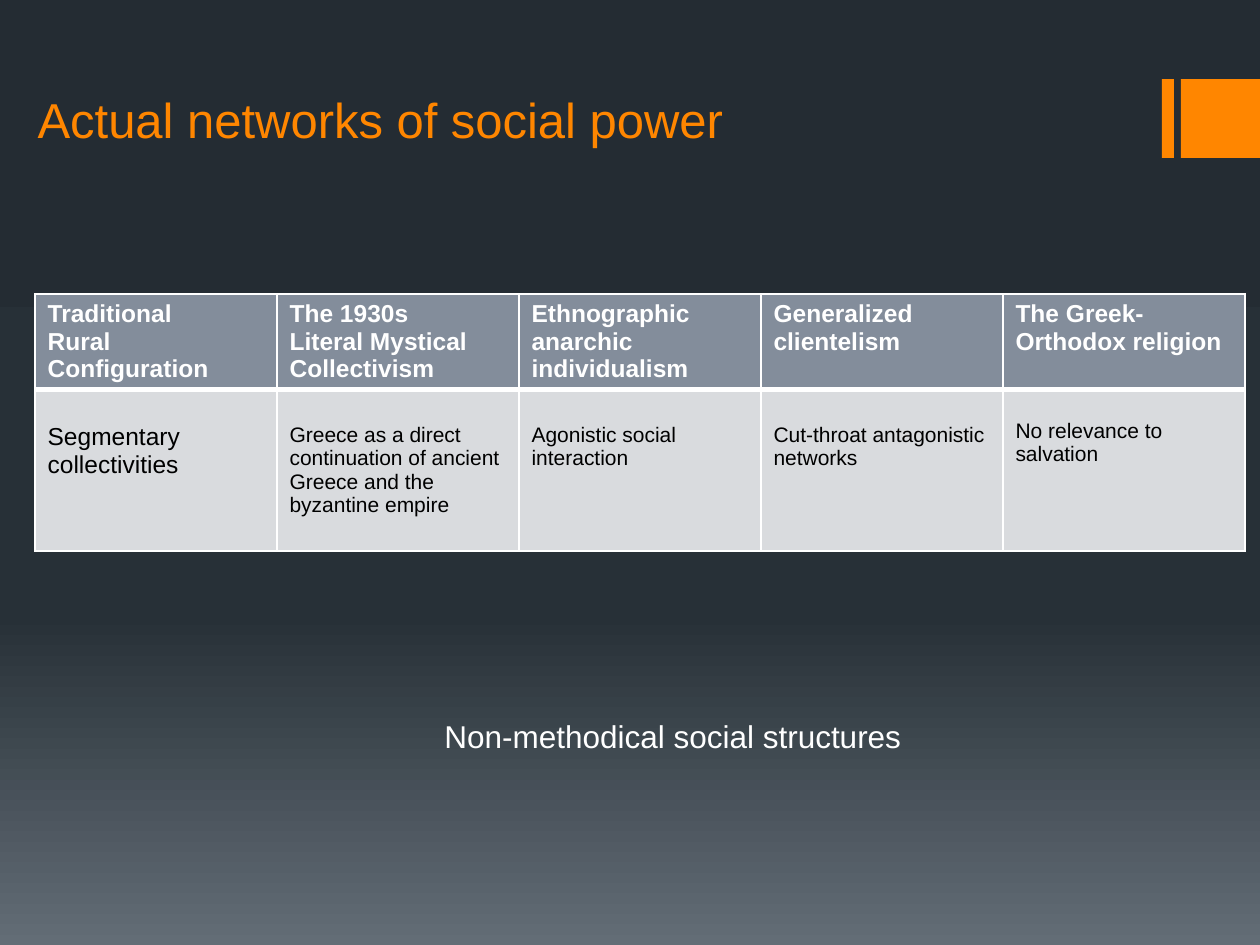
from copy import deepcopy

from lxml.etree import SubElement
from pptx import Presentation
from pptx.dml.color import RGBColor
from pptx.enum.shapes import MSO_SHAPE
from pptx.enum.text import MSO_ANCHOR, MSO_AUTO_SIZE, PP_ALIGN
from pptx.oxml.ns import qn
from pptx.util import Pt

SCALE = 914400 / 126
FONT = "Arial"
COLORS = {
    "accent": "FF8600",
    "white": "FFFFFF",
    "black": "000000",
    "header": "838D9B",
    "body": "D9DBDE",
    "night": "242C33",
    "dusk": "273037",
    "mist": "636D76",
}
BACKGROUND_STOPS = [(0, "night"), (0.65, "dusk"), (1, "mist")]
HEADERS = [
    "Traditional\nRural\nConfiguration",
    "The 1930s\nLiteral Mystical Collectivism",
    "Ethnographic anarchic individualism",
    "Generalized clientelism",
    "The Greek-Orthodox religion",
]
DETAILS = [
    ("Segmentary collectivities", 14, 34),
    ("Greece as a direct continuation of ancient Greece and the byzantine empire", 12, 34),
    ("Agonistic social interaction", 12, 34),
    ("Cut-throat antagonistic networks", 12, 34),
    ("No relevance to salvation", 12, 30),
]


def px(length):
    return round(length * SCALE)


def rgb(name):
    return RGBColor.from_string(COLORS[name])


class SlideBuilder:
    """Holds the style and the current slide, and draws each kind of element."""

    def __init__(self, deck):
        self.slide = deck.slides.add_slide(deck.slide_layouts[5])

    def background(self, stops):
        fill = self.slide.background.fill
        fill.gradient()
        fill.gradient_angle = 270
        stop_list = next(self.slide.element.iter(qn("a:gsLst")))
        while len(stop_list) < len(stops):
            stop_list.append(deepcopy(stop_list[-1]))
        for stop, (position, color) in zip(fill.gradient_stops, stops):
            stop.position = position
            stop.color.rgb = rgb(color)

    def set_text(self, frame, text, size, color, bold=False):
        frame.text = text
        for paragraph in frame.paragraphs:
            paragraph.alignment = PP_ALIGN.LEFT
            font = paragraph.font
            font.name, font.size, font.bold = FONT, Pt(size), bold
            font.color.rgb = rgb(color)

    def title(self, text, left, top, width, height):
        title = self.slide.shapes.title
        title.left, title.top = px(left), px(top)
        title.width, title.height = px(width), px(height)
        frame = title.text_frame
        frame.vertical_anchor = MSO_ANCHOR.BOTTOM
        frame.auto_size = MSO_AUTO_SIZE.NONE
        self.set_text(frame, text, 28, "accent")

    def bar(self, left, top, width, height):
        bar = self.slide.shapes.add_shape(
            MSO_SHAPE.RECTANGLE, px(left), px(top), px(width), px(height))
        bar.shadow.inherit = False
        bar.fill.solid()
        bar.fill.fore_color.rgb = rgb("accent")
        bar.line.fill.background()

    def label(self, text, left, top, width, height):
        box = self.slide.shapes.add_textbox(px(left), px(top), px(width), px(height))
        frame = box.text_frame
        frame.word_wrap = False
        frame.auto_size = MSO_AUTO_SIZE.SHAPE_TO_FIT_TEXT
        self.set_text(frame, text, 18, "white")

    def borders(self, cell, **widths):
        properties = cell._tc.get_or_add_tcPr()
        for index, side in enumerate(("L", "R", "T", "B")):
            line = SubElement(properties, qn(f"a:ln{side}"), w=str(Pt(widths.get(side, 1))))
            fill = SubElement(line, qn("a:solidFill"))
            SubElement(fill, qn("a:srgbClr"), val=COLORS["white"])
            properties.insert(index, line)

    def cell(self, cell, fill, **widths):
        cell.fill.solid()
        cell.fill.fore_color.rgb = rgb(fill)
        self.borders(cell, **widths)

    def table(self, left, top, column_width, row_heights):
        table = self.slide.shapes.add_table(
            len(row_heights), len(HEADERS), px(left), px(top),
            px(column_width * len(HEADERS)), px(sum(row_heights))).table
        for row, height in zip(table.rows, row_heights):
            row.height = px(height)
        for index, (header, (detail, size, margin)) in enumerate(zip(HEADERS, DETAILS)):
            table.columns[index].width = px(column_width)
            head, body = table.cell(0, index), table.cell(1, index)
            self.cell(head, "header", B=3)
            self.set_text(head.text_frame, header, 14, "white", bold=True)
            self.cell(body, "body", T=3)
            body.margin_top = px(margin)
            self.set_text(body.text_frame, detail, size, "black")


def main():
    deck = Presentation()
    deck.slide_width, deck.slide_height = px(1260), px(945)
    page = SlideBuilder(deck)
    page.background(BACKGROUND_STOPS)
    page.bar(1162, 79, 12, 79)
    page.bar(1181, 79, 79, 79)
    page.title("Actual networks of social power", 25, 45, 1008, 110)
    page.table(35, 294, 242, [95, 162])
    page.label("Non-methodical social structures", 432, 711, 486, 50)
    deck.save("out.pptx")


if __name__ == "__main__":
    main()
